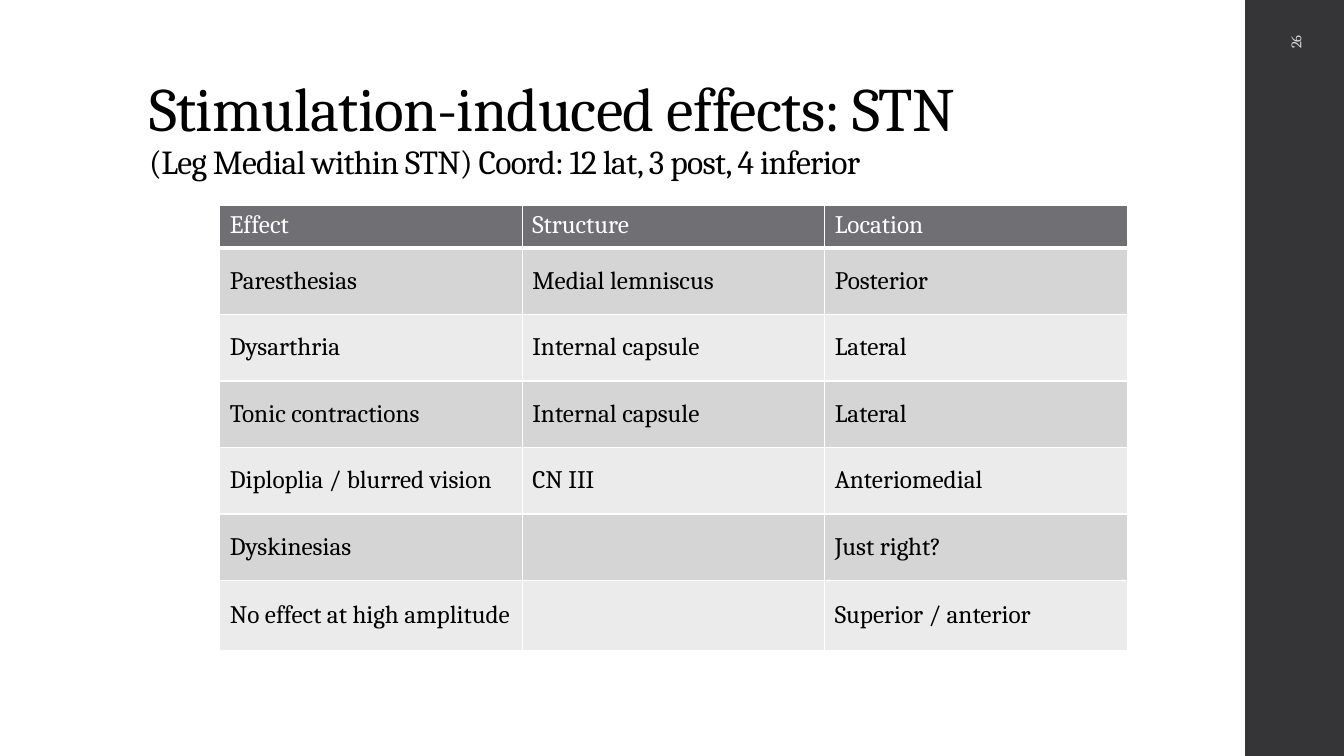
from dataclasses import dataclass
from typing import Any, NamedTuple

from lxml.etree import SubElement
from pptx import Presentation
from pptx.dml.color import RGBColor
from pptx.enum.shapes import MSO_SHAPE as Shape
from pptx.enum.text import MSO_ANCHOR as Anchor, MSO_AUTO_SIZE as AutoSize, PP_ALIGN as Align
from pptx.oxml.ns import qn
from pptx.util import Inches, Pt


@dataclass(frozen=True)
class Theme:
    font: str = "Cambria"
    ink: str = "000000"
    paper: str = "FFFFFF"
    sidebar: str = "353537"
    page_number: str = "D9D9DB"
    header: str = "6F6F74"
    bands: tuple[str, str] = ("D5D5D6", "EBEBEB")
    title_size: float = 44
    subtitle_size: float = 24
    table_size: float = 18
    number_size: float = 10.5
    thin_rule: float = 1
    thick_rule: float = 3


class Area(NamedTuple):
    left: float
    top: float
    width: float
    height: float

    def lengths(self) -> list[int]:
        return [Inches(value) for value in self]


class Effect(NamedTuple):
    effect: str
    structure: str
    location: str


THEME = Theme()
SIDEBAR = Area(12.35, 0, 1, 7.5)
TITLE = Area(1.38, 0.4, 10.6, 1.45)
PAGE_NUMBER = Area(11.81, 1.09, 2.08, 0.4)
TABLE = Area(2.18, 2.04, 9, 4.47)
ROW_HEIGHTS = [0.42] + [0.66] * 5 + [0.7]
EFFECTS = [
    Effect("Effect", "Structure", "Location"),
    Effect("Paresthesias", "Medial lemniscus", "Posterior"),
    Effect("Dysarthria", "Internal capsule", "Lateral"),
    Effect("Tonic contractions", "Internal capsule", "Lateral"),
    Effect("Diploplia / blurred vision", "CN III", "Anteriomedial"),
    Effect("Dyskinesias", "", "Just right?"),
    Effect("No effect at high amplitude", "", "Superior / anterior"),
]


def apply_format(target: Any, values: dict[str, Any]) -> None:
    for name, value in values.items():
        setattr(target, name, value)


def add_span(para: Any, text: str, size: float, color: str) -> Any:
    span = para.add_run()
    span.text = text
    apply_format(span.font, {"name": THEME.font, "size": Pt(size), "bold": False})
    span.font.color.rgb = RGBColor.from_string(color)
    return span


def add_sidebar(page: Any) -> None:
    bar = page.shapes.add_shape(Shape.RECTANGLE, *SIDEBAR.lengths())
    bar.shadow.inherit = False
    bar.fill.solid()
    bar.fill.fore_color.rgb = RGBColor.from_string(THEME.sidebar)
    bar.line.fill.background()


def fill_title(page: Any) -> None:
    title = page.shapes.title
    apply_format(title, dict(zip(("left", "top", "width", "height"), TITLE.lengths())))
    apply_format(title.text_frame, {
        "vertical_anchor": Anchor.BOTTOM, "auto_size": AutoSize.NONE, "word_wrap": True,
    })
    para = title.text_frame.paragraphs[0]
    apply_format(para, {"alignment": Align.LEFT, "line_spacing": 0.9})
    heading = add_span(para, "Stimulation-induced effects: STN", THEME.title_size, THEME.ink)
    para.add_line_break()
    detail = add_span(para, "(Leg Medial within STN) Coord: 12 lat, 3 post, 4 inferior",
                      THEME.subtitle_size, THEME.ink)
    for span in (heading, detail):
        span.font._element.set("spc", "-50")


def add_page_number(page: Any) -> None:
    box = page.shapes.add_textbox(*PAGE_NUMBER.lengths())
    box.rotation = 270
    apply_format(box.text_frame, {"vertical_anchor": Anchor.MIDDLE, "word_wrap": True})
    para = box.text_frame.paragraphs[0]
    para.alignment = Align.RIGHT
    add_span(para, "26", THEME.number_size, THEME.page_number)


def set_borders(cell: Any, widths: dict[str, float]) -> None:
    properties = cell._tc.get_or_add_tcPr()
    for position, (side, width) in enumerate(widths.items()):
        line = SubElement(properties, qn(f"a:ln{side}"), w=str(Pt(width)))
        paint = SubElement(line, qn("a:solidFill"))
        SubElement(paint, qn("a:srgbClr"), val=THEME.paper)
        properties.insert(position, line)


def format_cell(cell: Any, text: str, row: int) -> None:
    is_header = row == 0
    cell.vertical_anchor = Anchor.TOP if is_header else Anchor.MIDDLE
    cell.fill.solid()
    fill = THEME.header if is_header else THEME.bands[(row - 1) % 2]
    cell.fill.fore_color.rgb = RGBColor.from_string(fill)
    set_borders(cell, {
        "L": THEME.thin_rule,
        "R": THEME.thin_rule,
        "T": THEME.thick_rule if row == 1 else THEME.thin_rule,
        "B": THEME.thick_rule if is_header else THEME.thin_rule,
    })
    if text:
        color = THEME.paper if is_header else THEME.ink
        add_span(cell.text_frame.paragraphs[0], text, THEME.table_size, color)


def add_effects_table(page: Any) -> None:
    frame = page.shapes.add_table(len(EFFECTS), len(Effect._fields), *TABLE.lengths())
    table = frame.table
    for row, (effect, height) in enumerate(zip(EFFECTS, ROW_HEIGHTS)):
        table.rows[row].height = Inches(height)
        for column, text in enumerate(effect):
            format_cell(table.cell(row, column), text, row)


def main() -> None:
    deck = Presentation()
    apply_format(deck, {"slide_width": Inches(13.33), "slide_height": Inches(7.5)})
    page = deck.slides.add_slide(deck.slide_layouts.get_by_name("Title Only"))
    add_sidebar(page)
    fill_title(page)
    add_page_number(page)
    add_effects_table(page)
    deck.save("out.pptx")


if __name__ == "__main__":
    main()
